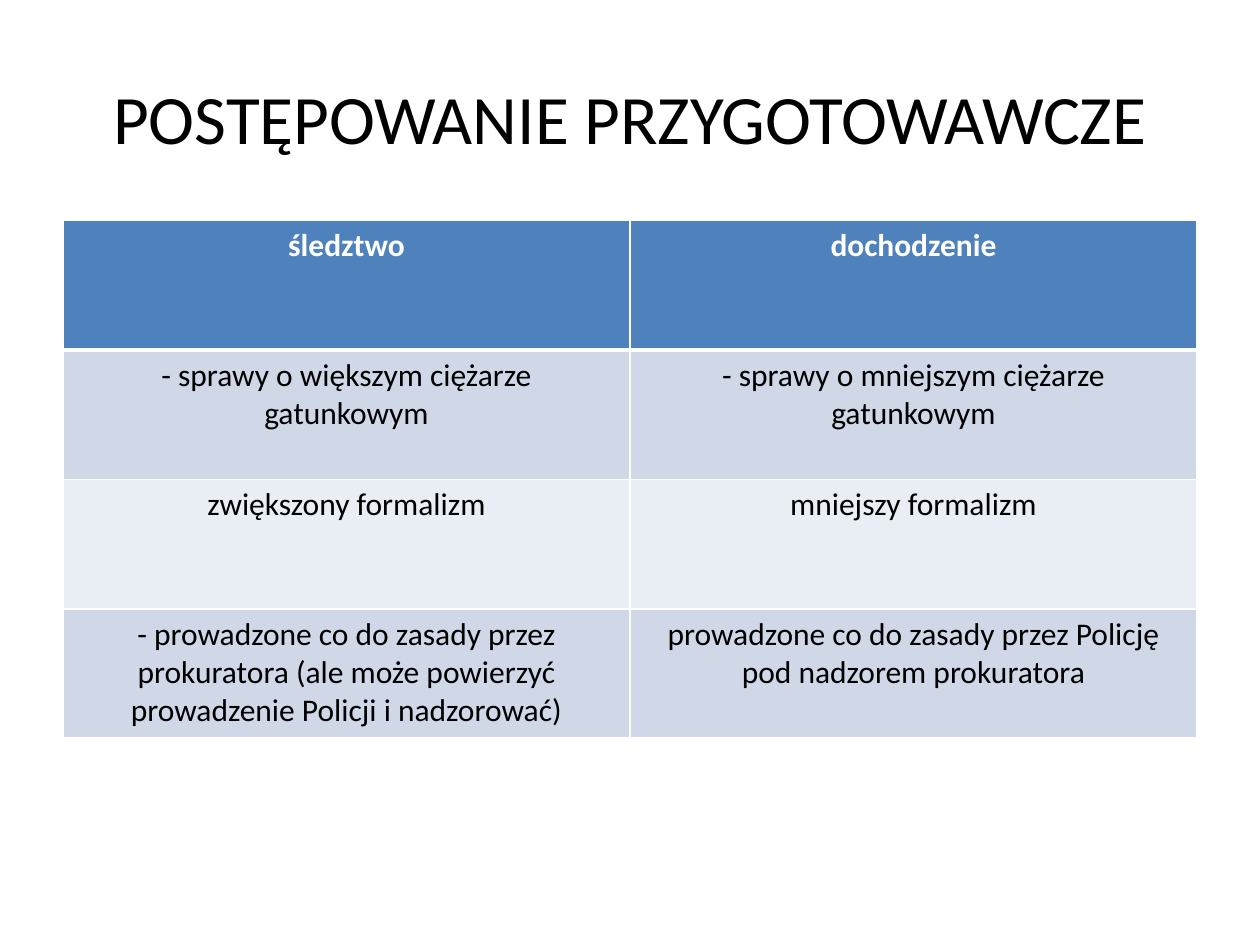
from lxml import etree
from pptx import Presentation
from pptx.dml.color import RGBColor
from pptx.enum.text import MSO_ANCHOR, PP_ALIGN
from pptx.oxml.ns import qn
from pptx.util import Inches, Pt

CENTER = PP_ALIGN.CENTER
MIDDLE = MSO_ANCHOR.MIDDLE

TITLE = "POSTĘPOWANIE PRZYGOTOWAWCZE"
ROWS = [
    ("śledztwo", "dochodzenie"),
    ("- sprawy o większym ciężarze gatunkowym",
     "- sprawy o mniejszym ciężarze gatunkowym"),
    ("zwiększony formalizm", "mniejszy formalizm"),
    ("- prowadzone co do zasady przez prokuratora "
     "(ale może powierzyć prowadzenie Policji i nadzorować)",
     "prowadzone co do zasady przez Policję pod nadzorem prokuratora"),
]

FONT = "Calibri"
COLORS = {
    "text": "000000",
    "header_text": "FFFFFF",
    "header": "4F81BD",
    "odd_row": "D0D8E8",
    "even_row": "E9EDF4",
    "border": "FFFFFF",
}
LEFT, WIDTH = 0.5, 9
TITLE_TOP, TITLE_HEIGHT = 0.3, 1.25
TABLE_TOP, TABLE_HEIGHT = 1.75, 4.11


def write_text(text_frame, text, size, color="text", bold=False):
    paragraph = text_frame.paragraphs[0]
    paragraph.alignment = CENTER
    run = paragraph.add_run()
    run.text = text
    run.font.name = FONT
    run.font.size = Pt(size)
    run.font.bold = bold
    run.font.color.rgb = RGBColor.from_string(COLORS[color])


def set_borders(cell, widths):
    """Draw cell borders; widths holds points for left, right, top, bottom."""
    properties = cell._tc.get_or_add_tcPr()
    for side, width in zip("LRTB", widths):
        line = etree.SubElement(properties, qn(f"a:ln{side}"), w=str(Pt(width)))
        fill = etree.SubElement(line, qn("a:solidFill"))
        etree.SubElement(fill, qn("a:srgbClr"), val=COLORS["border"])


def add_title(slide):
    title = slide.shapes.add_textbox(
        Inches(LEFT), Inches(TITLE_TOP), Inches(WIDTH), Inches(TITLE_HEIGHT))
    text_frame = title.text_frame
    text_frame.word_wrap = True
    text_frame.vertical_anchor = MIDDLE
    write_text(text_frame, TITLE, size=39.6)


def add_comparison_table(slide):
    table = slide.shapes.add_table(
        len(ROWS), len(ROWS[0]), Inches(LEFT), Inches(TABLE_TOP),
        Inches(WIDTH), Inches(TABLE_HEIGHT)).table
    for row_index, row in enumerate(ROWS):
        is_header = row_index == 0
        band = "header" if is_header else "odd_row" if row_index % 2 else "even_row"
        top = 3 if row_index == 1 else 1
        bottom = 3 if is_header else 1
        for column_index, text in enumerate(row):
            cell = table.cell(row_index, column_index)
            set_borders(cell, (1, 1, top, bottom))
            cell.fill.solid()
            cell.fill.fore_color.rgb = RGBColor.from_string(COLORS[band])
            write_text(cell.text_frame, text, size=18, bold=is_header,
                       color="header_text" if is_header else "text")


def main():
    presentation = Presentation()
    presentation.slide_width = Inches(10)
    presentation.slide_height = Inches(7.5)
    slide = presentation.slides.add_slide(presentation.slide_layouts[6])
    add_title(slide)
    add_comparison_table(slide)
    presentation.save("out.pptx")


if __name__ == "__main__":
    main()
